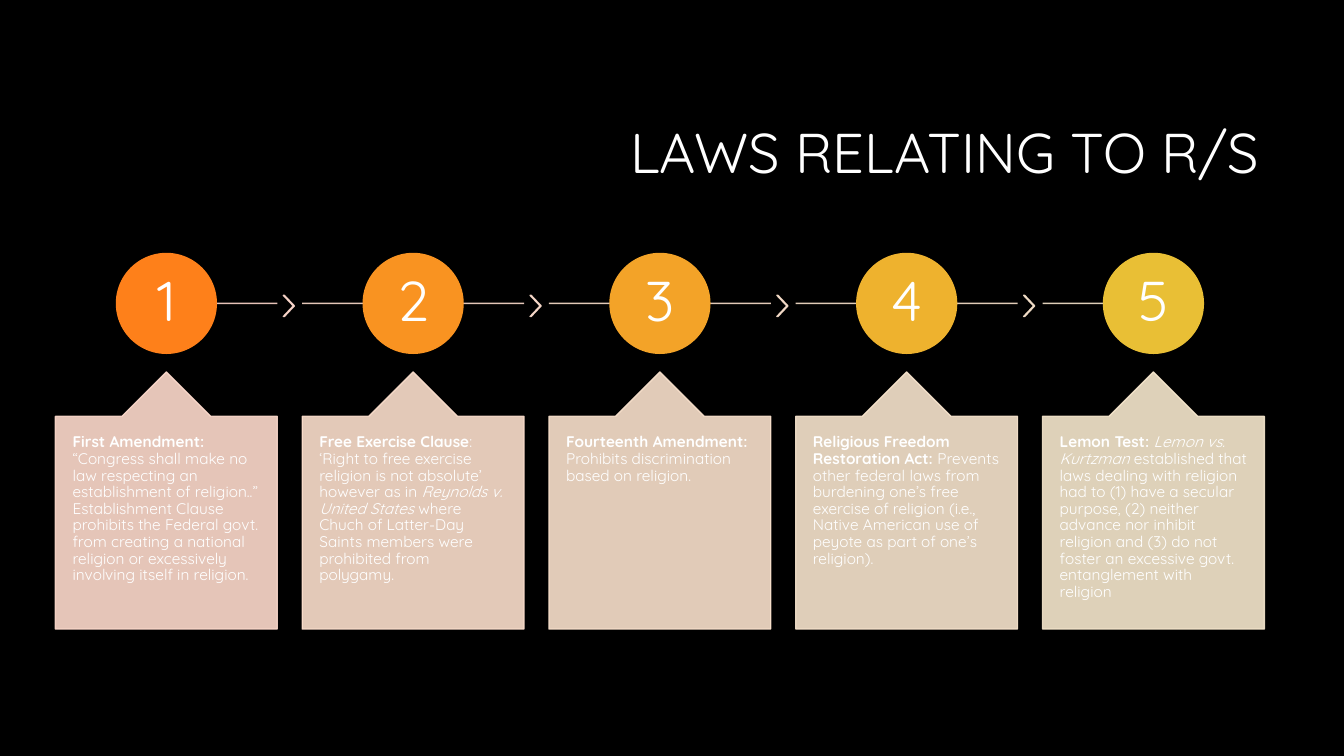
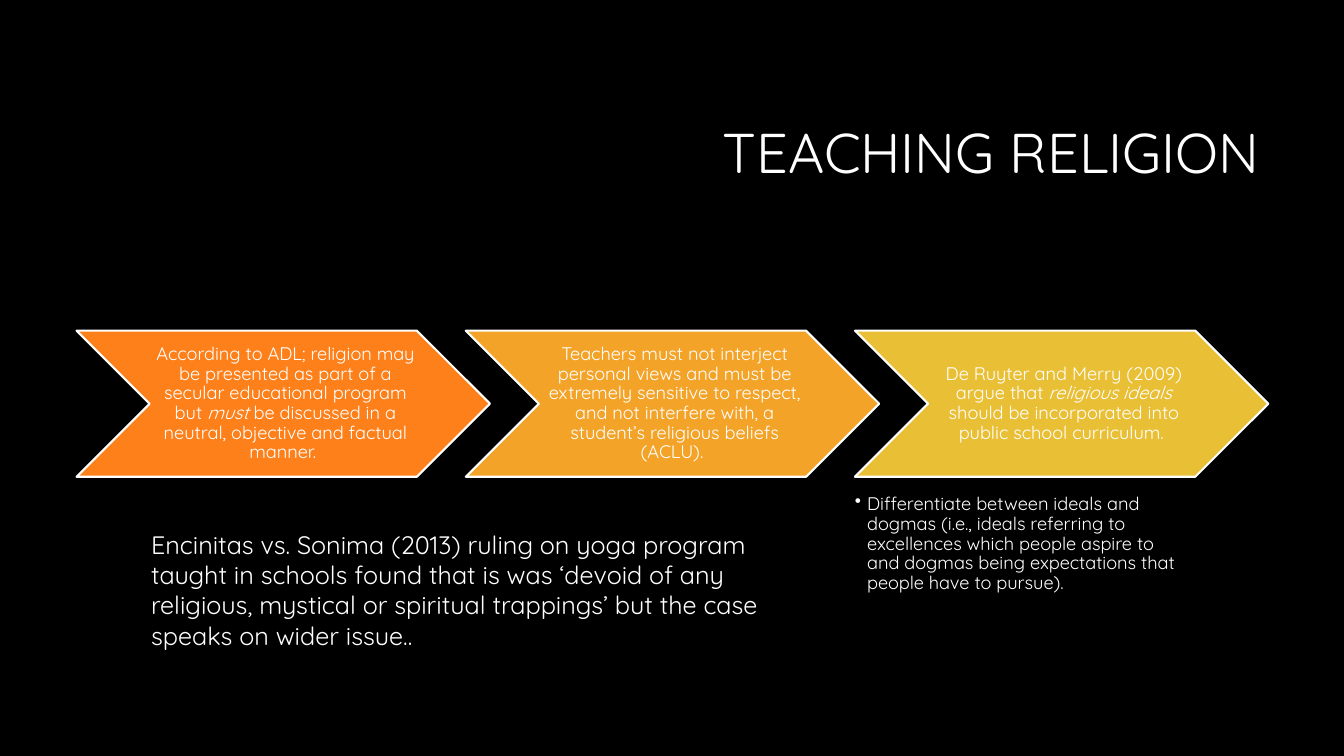
from dataclasses import dataclass

from lxml.etree import SubElement
from pptx import Presentation
from pptx.dml.color import RGBColor
from pptx.enum.shapes import MSO_CONNECTOR, MSO_SHAPE
from pptx.enum.text import MSO_ANCHOR, MSO_AUTO_SIZE, PP_ALIGN
from pptx.oxml.ns import qn
from pptx.util import Inches, Pt

FONT = "Quicksand"
WHITE = "FFFFFF"
BLACK = "000000"
ORANGE, AMBER, GOLD = "FE801A", "F3A328", "E9BF35"


@dataclass(frozen=True)
class Span:
    text: str
    bold: bool = False
    italic: bool = False


@dataclass(frozen=True)
class Law:
    circle: str
    line: str
    arrow: str
    card: str
    spans: tuple[Span, ...]


@dataclass(frozen=True)
class Stage:
    color: str
    spans: tuple[Span, ...]


LAWS = (
    Law(ORANGE, "FFD8CD", "FED9CD", "FEDBCD", (
        Span("First Amendment: ", bold=True),
        Span("“Congress shall make no law respecting an establishment of religion..” "
             "Establishment Clause prohibits the Federal govt. from creating a national "
             "religion or excessively involving itself in religion."))),
    Law("F99321", "FDDCCD", "FCDDCD", "FCDFCD", (
        Span("Free Exercise Clause", bold=True),
        Span(": ‘Right to free exercise religion is not absolute’ however as in "),
        Span("Reynolds v. United States", italic=True),
        Span(" where Chuch of Latter-Day Saints members were prohibited from polygamy."))),
    Law(AMBER, "FBE0CD", "FBE1CD", "FAE2CD", (
        Span("Fourteenth Amendment: ", bold=True),
        Span("Prohibits discrimination based on religion."))),
    Law("EEB22E", "FAE3CD", "F9E4CD", "F8E5CE", (
        Span("Religious Freedom Restoration Act: ", bold=True),
        Span("Prevents other federal laws from burdening one’s free exercise of religion "
             "(i.e., Native American use of peyote as part of one’s religion)."))),
    Law(GOLD, "F8E6CE", "", "F7E8CE", (
        Span("Lemon Test: ", bold=True),
        Span("Lemon vs. Kurtzman", italic=True),
        Span(" established that laws dealing with religion had to (1) have a secular "
             "purpose, (2) neither advance nor inhibit religion and (3) do not foster an "
             "excessive govt. entanglement with religion"))),
)

STAGES = (
    Stage(ORANGE, (
        Span("According to ADL; religion may be presented as part of a secular "
             "educational program but "),
        Span("must", italic=True),
        Span(" be discussed in a neutral, objective and factual manner. "))),
    Stage(AMBER, (
        Span("Teachers must not interject personal views and must be extremely sensitive "
             "to respect, and not interfere with, a student’s religious beliefs (ACLU). "),)),
    Stage(GOLD, (
        Span("De Ruyter and Merry (2009) argue that "),
        Span("religious ideals", italic=True),
        Span(" should be incorporated into public school curriculum. "))),
)


def rgb(color: str) -> RGBColor:
    return RGBColor.from_string(color)


def set_opacity(shape, percent: int) -> None:
    for clr in shape._element.spPr.iter(qn("a:srgbClr")):
        SubElement(clr, qn("a:alpha")).set("val", str(percent * 1000))


def write(tf, spans: tuple[Span, ...], size: float, align=PP_ALIGN.LEFT,
          anchor=MSO_ANCHOR.TOP, insets=(0.1, 0.05, 0.1, 0.05), spacing: float = 0.9):
    tf.word_wrap = True
    tf.auto_size = MSO_AUTO_SIZE.NONE
    tf.vertical_anchor = anchor
    tf.margin_left, tf.margin_top, tf.margin_right, tf.margin_bottom = map(Inches, insets)
    p = tf.paragraphs[0]
    p.alignment = align
    p.line_spacing = spacing
    for span in spans:
        r = p.add_run()
        r.text = span.text
        r.font.name = FONT
        r.font.size = Pt(size)
        r.font.bold = span.bold
        r.font.italic = span.italic
        r.font.color.rgb = rgb(WHITE)
    return p


def add_shape(s, kind, left: float, top: float, width: float, height: float,
              fill: str, line: str, weight: float = 1):
    sp = s.shapes.add_shape(kind, Inches(left), Inches(top), Inches(width), Inches(height))
    sp.shadow.inherit = False
    sp.fill.solid()
    sp.fill.fore_color.rgb = rgb(fill)
    sp.line.color.rgb = rgb(line)
    sp.line.width = Pt(weight)
    return sp


def add_line(s, x1: float, x2: float, y: float, color: str) -> None:
    cx = s.shapes.add_connector(MSO_CONNECTOR.STRAIGHT,
                                Inches(x1), Inches(y), Inches(x2), Inches(y))
    cx.line.color.rgb = rgb(color)
    cx.line.width = Pt(1)
    set_opacity(cx, 90)
    SubElement(cx._element.spPr, qn("a:effectLst"))


def add_text(s, left: float, top: float, width: float, height: float):
    return s.shapes.add_textbox(Inches(left), Inches(top),
                                Inches(width), Inches(height)).text_frame


def add_titled_slide(prs, title: str):
    s = prs.slides.add_slide(prs.slide_layouts[5])
    sp = s.shapes.title
    sp.left, sp.top, sp.width, sp.height = map(Inches, (3.17, 0.84, 9.42, 1.41))
    write(sp.text_frame, (Span(title),), 40, PP_ALIGN.RIGHT, MSO_ANCHOR.MIDDLE)
    return s


def add_law(s, law: Law, index: int) -> None:
    card_w, circle_d, line_y = 2.2, 0.99, 3.01
    left = 0.55 + index * (10.34 - 0.55) / (len(LAWS) - 1)
    center = left + card_w / 2
    start = center if index == 0 else left
    end = center if index == len(LAWS) - 1 else left + card_w
    add_line(s, start, end, line_y, law.line)
    if law.arrow:
        arrow = add_shape(s, MSO_SHAPE.CHEVRON, left + 2.26, 2.93, 0.11, 0.21,
                          law.arrow, law.arrow)
        arrow.adjustments[0] = 0.9
        set_opacity(arrow, 90)
    circle = add_shape(s, MSO_SHAPE.OVAL, center - circle_d / 2, line_y - circle_d / 2,
                       circle_d, circle_d, law.circle, law.circle)
    write(circle.text_frame, (Span(str(index + 1)),), 40, PP_ALIGN.CENTER,
          MSO_ANCHOR.MIDDLE, (0.04,) * 4)
    card = add_shape(s, MSO_SHAPE.UP_ARROW_CALLOUT, left, 3.69, card_w, 2.55,
                     law.card, law.card)
    for i, value in enumerate((0.5, 0.2, 0.2, 1)):
        card.adjustments[i] = value
    set_opacity(card, 90)
    write(card.text_frame, law.spans, 11, insets=(0.17, 0.18, 0.17, 0.18))


def add_stage(s, stage: Stage, index: int) -> None:
    sp = add_shape(s, MSO_SHAPE.CHEVRON, 0.76 + index * 3.86, 3.28, 4.1, 1.45,
                   stage.color, WHITE, 1.5)
    write(sp.text_frame, stage.spans, 13, PP_ALIGN.CENTER, MSO_ANCHOR.MIDDLE,
          (0.06, 0.02, 0.02, 0.02))


def build_laws(prs) -> None:
    s = add_titled_slide(prs, "LAWS RELATING TO R/S")
    for index, law in enumerate(LAWS):
        add_law(s, law, index)


def build_teaching(prs) -> None:
    s = add_titled_slide(prs, "TEACHING RELIGION")
    for index, stage in enumerate(STAGES):
        add_stage(s, stage, index)
    p = write(add_text(s, 8.48, 4.91, 3.28, 1.01), (
        Span("Differentiate between ideals and dogmas (i.e., ideals referring to "
             "excellences which people aspire to and dogmas being expectations that "
             "people have to pursue)."),), 13, insets=(0,) * 4)
    p_pr = p._p.get_or_add_pPr()
    p_pr.set("marL", str(Inches(0.12)))
    p_pr.set("indent", str(Inches(-0.12)))
    SubElement(p_pr, qn("a:buChar")).set("char", "•")
    write(add_text(s, 1.4, 5.2, 6.22, 1.31), (
        Span("Encinitas vs. Sonima (2013) ruling on yoga program taught in schools found "
             "that is was ‘devoid of any religious, mystical or spiritual trappings’ but "
             "the case speaks on wider issue.."),), 18, spacing=1.0)


def main() -> None:
    prs = Presentation()
    prs.slide_width, prs.slide_height = Inches(13.33), Inches(7.5)
    background = prs.slide_master.background.fill
    background.solid()
    background.fore_color.rgb = rgb(BLACK)
    build_laws(prs)
    build_teaching(prs)
    prs.save("out.pptx")


if __name__ == "__main__":
    main()
